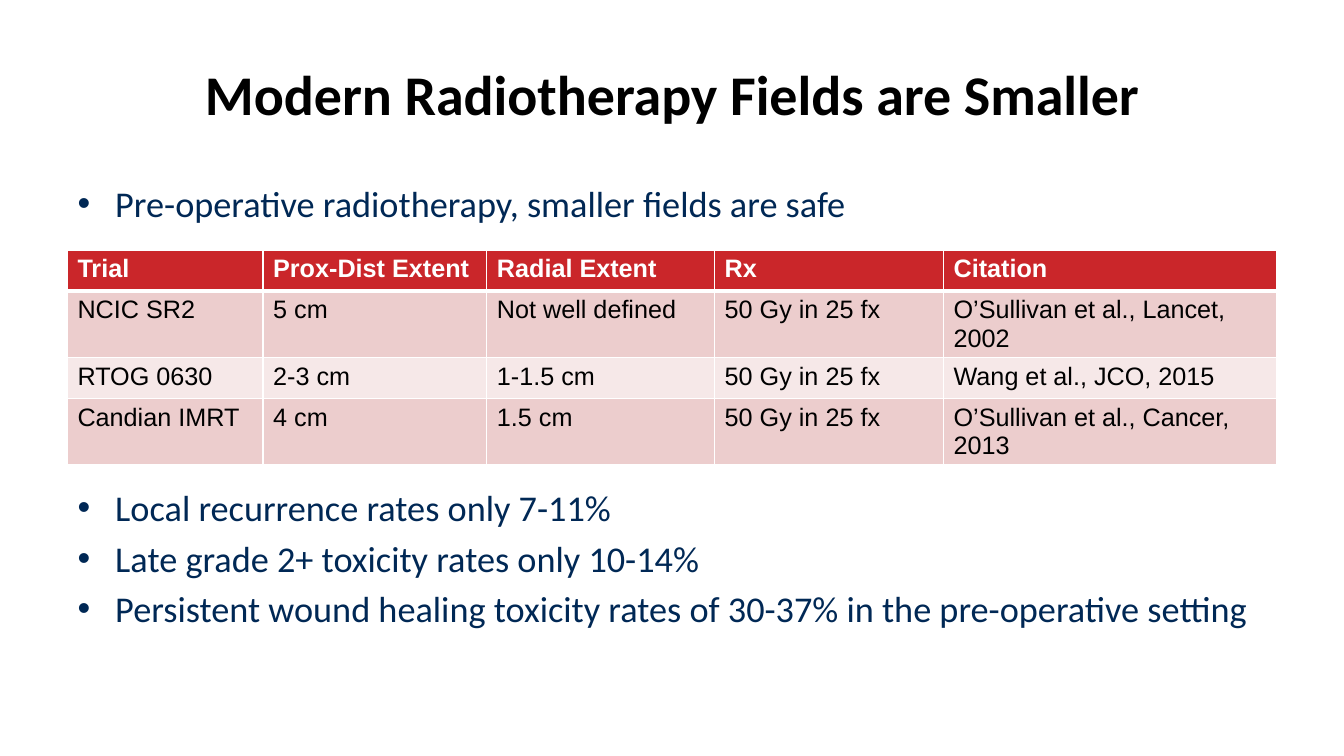
from dataclasses import astuple, dataclass

from lxml.etree import SubElement
from pptx import Presentation
from pptx.dml.color import RGBColor
from pptx.enum.text import MSO_ANCHOR, MSO_AUTO_SIZE, PP_ALIGN
from pptx.oxml import parse_xml
from pptx.oxml.ns import nsdecls, qn
from pptx.util import Cm, Pt


@dataclass(frozen=True)
class Theme:
    ink: str = "000000"
    navy: str = "002855"
    white: str = "FFFFFF"
    red: str = "CA262A"
    rose: str = "ECCDCD"
    blush: str = "F6E8E8"
    head: str = "Calibri"
    grid: str = "Arial"
    title: float = 40
    list: float = 25.9
    cell: float = 18


@dataclass(frozen=True)
class Trial:
    name: str
    extent: str
    radial: str
    dose: str
    cite: str


@dataclass(frozen=True)
class Point:
    text: str
    gap: float


THEME = Theme()
LEFT, WIDTH = 1.7, 30.48
COLS = (4.93, 5.64, 5.74, 5.77, 8.4)
ROW = 1.03
TRIALS = (
    Trial("Trial", "Prox-Dist Extent", "Radial Extent", "Rx", "Citation"),
    Trial("NCIC SR2", "5 cm", "Not well defined", "50 Gy in 25 fx",
          "O’Sullivan et al., Lancet, 2002"),
    Trial("RTOG 0630", "2-3 cm", "1-1.5 cm", "50 Gy in 25 fx",
          "Wang et al., JCO, 2015"),
    Trial("Candian IMRT", "4 cm", "1.5 cm", "50 Gy in 25 fx",
          "O’Sullivan et al., Cancer, 2013"),
)
# The wide gap before the second point leaves room for the table.
POINTS = (
    Point("Pre-operative radiotherapy, smaller fields are safe", 0),
    Point("Local recurrence rates only 7-11%", 186),
    Point("Late grade 2+ toxicity rates only 10-14%", 5),
    Point("Persistent wound healing toxicity rates of 30-37% "
          "in the pre-operative setting", 5),
)


def write(para, text: str, *, font: str, size: float, color: str,
          bold: bool = False, align=PP_ALIGN.LEFT, gap: float = 0) -> None:
    para.alignment = align
    para.space_before = Pt(gap)
    run = para.add_run()
    run.text = text
    run.font.name = font
    run.font.size = Pt(size)
    run.font.bold = bold
    run.font.color.rgb = RGBColor.from_string(color)


def place(shape, top: float, height: float, anchor) -> None:
    shape.left, shape.top = Cm(LEFT), Cm(top)
    shape.width, shape.height = Cm(WIDTH), Cm(height)
    frame = shape.text_frame
    frame.word_wrap = True
    frame.auto_size = MSO_AUTO_SIZE.NONE
    frame.vertical_anchor = anchor


def bullet(para, color: str) -> None:
    props = para._p.get_or_add_pPr()
    props.set("marL", str(Cm(0.95)))
    props.set("indent", str(-Cm(0.95)))
    tint = SubElement(props, qn("a:buClr"))
    SubElement(tint, qn("a:srgbClr"), val=color)
    SubElement(props, qn("a:buFont"), typeface=THEME.grid)
    SubElement(props, qn("a:buChar"), char="•")


def border(cell, top: float, bottom: float) -> None:
    """Draw white edges, with widths in points; the sides are 1 point."""
    props = cell._tc.get_or_add_tcPr()
    edges = (("L", 1), ("R", 1), ("T", top), ("B", bottom))
    for spot, (side, width) in enumerate(edges):
        props.insert(spot, parse_xml(
            f'<a:ln{side} {nsdecls("a")} w="{Pt(width)}"><a:solidFill>'
            f'<a:srgbClr val="{THEME.white}"/></a:solidFill></a:ln{side}>'))


def add_trials(slide) -> None:
    frame = slide.shapes.add_table(len(TRIALS), len(COLS), Cm(LEFT), Cm(6.3),
                                   Cm(WIDTH), Cm(ROW * len(TRIALS)))
    table = frame.table
    for col, width in zip(table.columns, COLS):
        col.width = Cm(width)
    for r, trial in enumerate(TRIALS):
        table.rows[r].height = Cm(ROW)
        head = r == 0
        fill = THEME.red if head else THEME.rose if r % 2 else THEME.blush
        for c, text in enumerate(astuple(trial)):
            cell = table.cell(r, c)
            cell.fill.solid()
            cell.fill.fore_color.rgb = RGBColor.from_string(fill)
            border(cell, top=3 if r == 1 else 1, bottom=3 if head else 1)
            write(cell.text_frame.paragraphs[0], text, font=THEME.grid,
                  size=THEME.cell, bold=head,
                  color=THEME.white if head else THEME.ink)


def main() -> None:
    deck = Presentation()
    deck.slide_width, deck.slide_height = Cm(33.87), Cm(19.05)
    slide = deck.slides.add_slide(deck.slide_layouts[1])

    title = slide.shapes.title
    place(title, 0.76, 3.18, MSO_ANCHOR.MIDDLE)
    write(title.text_frame.paragraphs[0], "Modern Radiotherapy Fields are Smaller",
          font=THEME.head, size=THEME.title, color=THEME.ink, bold=True,
          align=PP_ALIGN.CENTER)

    body = slide.placeholders[1]
    place(body, 4.45, 12.57, MSO_ANCHOR.TOP)
    frame = body.text_frame
    for i, point in enumerate(POINTS):
        para = frame.add_paragraph() if i else frame.paragraphs[0]
        bullet(para, THEME.navy)
        write(para, point.text, font=THEME.head, size=THEME.list,
              color=THEME.navy, gap=point.gap)

    add_trials(slide)
    deck.save("out.pptx")


if __name__ == "__main__":
    main()
